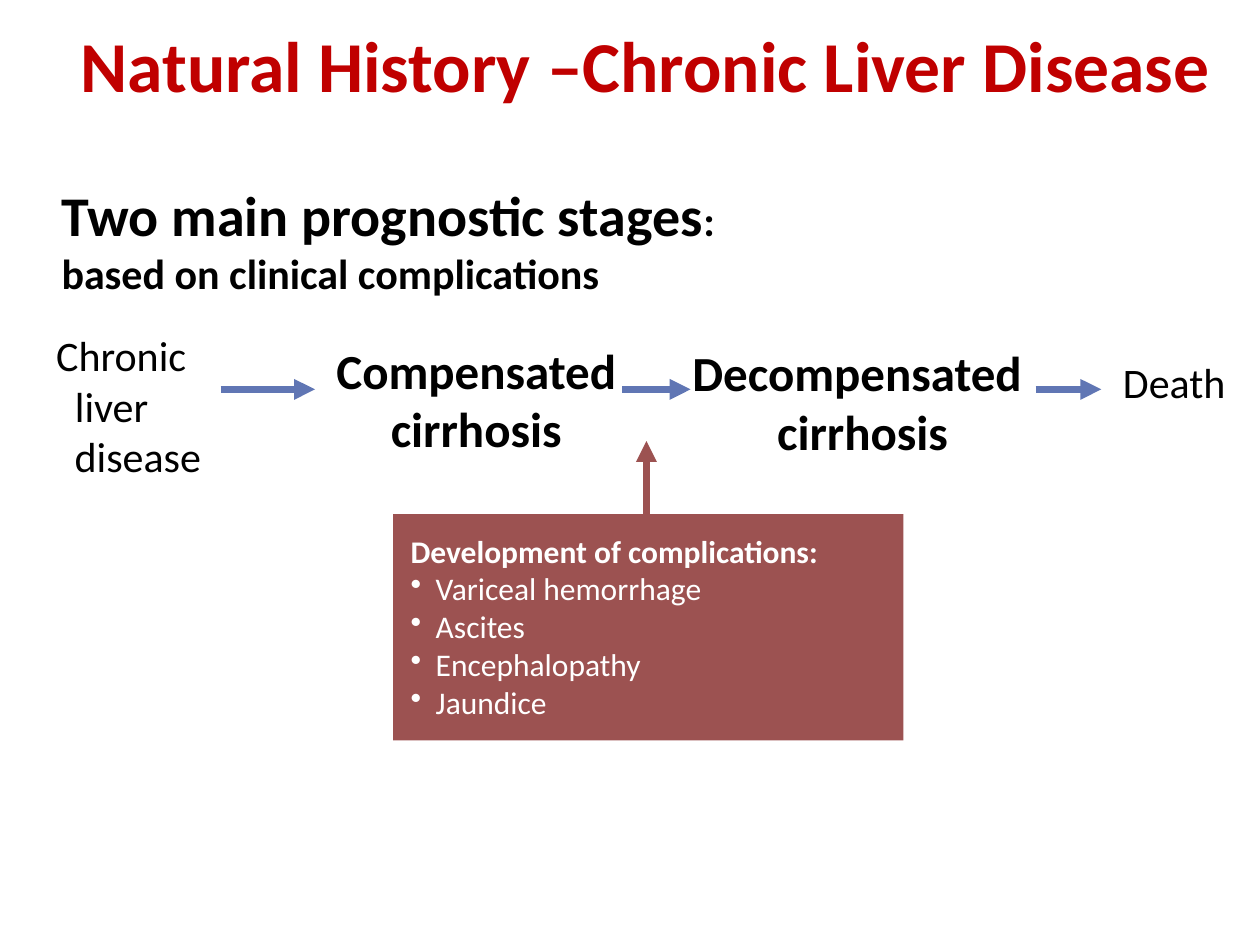
"""Build a slide on the natural history of chronic liver disease."""
import pptx
import pptx.dml.color
import pptx.enum.shapes
import pptx.enum.text
import pptx.oxml
import pptx.oxml.ns
import pptx.util

Pt = pptx.util.Pt
ALIGN = pptx.enum.text.PP_ALIGN
ANCHOR = pptx.enum.text.MSO_ANCHOR
FONT = "Calibri"
BLACK, WHITE, RED, BLUE, BROWN = "000000", "FFFFFF", "C00000", "6076B4", "9C5251"

TITLE = "Natural History –Chronic Liver Disease"
HEADING = ("Two main prognostic stages", ":")
SUBHEADING = "based on clinical complications"
START = [("Chronic", 16.3, ALIGN.LEFT), ("liver", 27, ALIGN.LEFT),
         ("disease", 0, ALIGN.CENTER)]
STAGES = [
    (["Compensated", "cirrhosis"], (191.5, 194.4, 161.3, 67.7), 28, True),
    (["Decompensated ", "cirrhosis"], (394.6, 195.8, 196.6, 67.7), 28, True),
    (["Death"], (634.3, 203.8, 73.4, 28.8), 24, False),
]
COMPLICATIONS_TITLE = "Development of complications:"
COMPLICATIONS = ["Variceal hemorrhage", "Ascites", "Encephalopathy", "Jaundice"]
COMPLICATIONS_BOX = (224.6, 293.8, 291.6, 129.3)
FLOW_Y = 222.5
FLOW_ARROWS = [(126, 180), (355.7, 394.6), (591.8, 629.3)]
UP_ARROW_X, UP_ARROW_TIP = 369.4, 252


def rgb(hex_color):
    """Return the colour for a hex string."""
    return pptx.dml.color.RGBColor.from_string(hex_color)


def place(sp, box):
    """Move and size a shape."""
    sp.left, sp.top, sp.width, sp.height = map(Pt, box)


def set_frame(tf, inset_x=0, inset_y=0, wrap=True, anchor=ANCHOR.TOP):
    """Set insets, wrapping and anchor of a text frame."""
    tf.auto_size = pptx.enum.text.MSO_AUTO_SIZE.NONE
    tf.word_wrap = wrap
    tf.vertical_anchor = anchor
    tf.margin_left = tf.margin_right = Pt(inset_x)
    tf.margin_top = tf.margin_bottom = Pt(inset_y)
    return tf


def add_run(p, text, size=24, color=BLACK, bold=False):
    """Add a formatted run to a paragraph."""
    r = p.add_run()
    r.text = text
    r.font.name, r.font.size, r.font.bold = FONT, Pt(size), bold
    r.font.color.rgb = rgb(color)


def add_text(tf, text, align=ALIGN.LEFT, indent=0, bullet=False, **font):
    """Add a formatted paragraph to a text frame and return it."""
    p = tf.paragraphs[0]
    if p.runs:
        p = tf.add_paragraph()
    p.alignment = align
    pPr = p._p.get_or_add_pPr()
    pPr.set("marL", str(Pt(indent)))
    pPr.set("indent", str(Pt(-indent if bullet else 0)))
    if bullet:
        bu = pptx.oxml.parse_xml(
            f'<a:buChar {pptx.oxml.ns.nsdecls("a")} char="•"/>')
        pPr.append(bu)
    add_run(p, text, **font)
    return p


def add_box(s, box, **frame):
    """Add a text box and return its text frame."""
    return set_frame(s.shapes.add_textbox(*map(Pt, box)).text_frame, **frame)


def add_arrow(s, x1, y1, x2, y2, color):
    """Add an arrow that points at its second end."""
    sp = s.shapes.add_connector(
        pptx.enum.shapes.MSO_CONNECTOR.STRAIGHT, Pt(x1), Pt(y1), Pt(x2), Pt(y2))
    sp.line.color.rgb = rgb(color)
    sp.line.width = Pt(4)
    ns = pptx.oxml.ns.nsdecls("a")
    sp.line._get_or_add_ln().append(
        pptx.oxml.parse_xml(f'<a:tailEnd {ns} type="triangle"/>'))
    sp._element.spPr.append(pptx.oxml.parse_xml(f"<a:effectLst {ns}/>"))


def main():
    """Build and save the slide."""
    prs = pptx.Presentation()
    prs.slide_width, prs.slide_height = Pt(720), Pt(540)
    s = prs.slides.add_slide(prs.slide_layouts[5])

    title = s.shapes.title
    place(title, (0, -23.8, 720, 120.2))
    add_text(set_frame(title.text_frame, anchor=ANCHOR.MIDDLE), TITLE,
             indent=46, size=40.9, color=RED, bold=True)

    tf = add_box(s, (12.2, 185, 133.2, 114.5), inset_x=3.6, inset_y=3.6)
    for text, indent, align in START:
        add_text(tf, text, align=align, indent=indent)

    for lines, box, size, bold in STAGES:
        tf = add_box(s, box, wrap=not bold)
        for line in lines:
            add_text(tf, line, align=ALIGN.CENTER, size=size, bold=bold)

    for x1, x2 in FLOW_ARROWS:
        add_arrow(s, x1, FLOW_Y, x2, FLOW_Y, BLUE)

    sp = s.shapes.add_shape(pptx.enum.shapes.MSO_SHAPE.RECTANGLE,
                            *map(Pt, COMPLICATIONS_BOX))
    sp.shadow.inherit = False
    sp.fill.solid()
    sp.fill.fore_color.rgb = rgb(BROWN)
    sp.line.fill.background()
    tf = set_frame(sp.text_frame, inset_x=10, inset_y=10)
    add_text(tf, COMPLICATIONS_TITLE, size=18, color=WHITE, bold=True)
    for text in COMPLICATIONS:
        add_text(tf, text, indent=14.4, bullet=True, size=18, color=WHITE)
    add_arrow(s, UP_ARROW_X, COMPLICATIONS_BOX[1], UP_ARROW_X, UP_ARROW_TIP, BROWN)

    tf = add_box(s, (28.1, 99.4, 684, 104.4), inset_x=7.2, inset_y=3.6)
    p = add_text(tf, HEADING[0], size=32, bold=True)
    add_run(p, HEADING[1], bold=True)
    add_text(tf, SUBHEADING, bold=True)

    prs.save("out.pptx")


if __name__ == "__main__":
    main()
